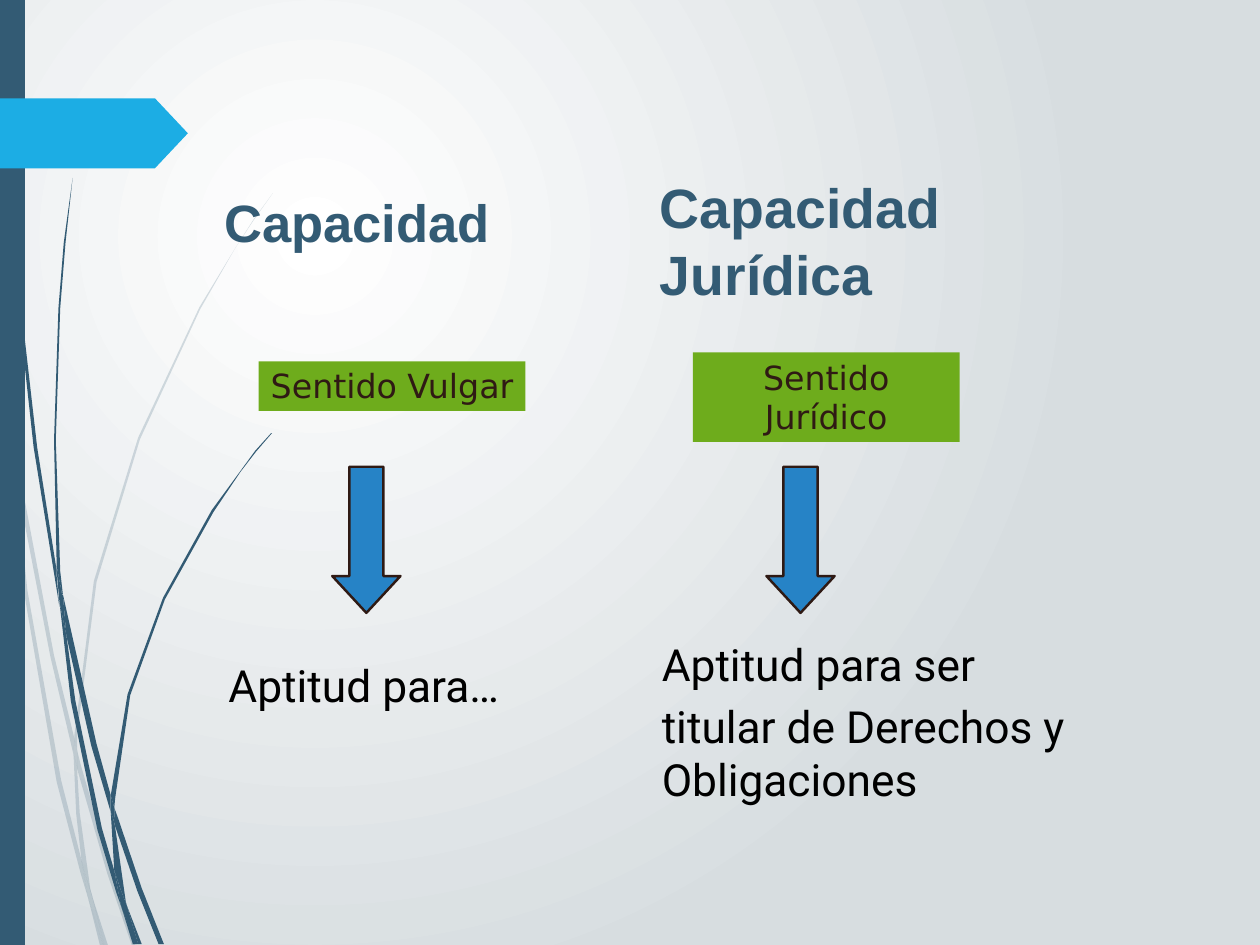
from dataclasses import dataclass

from lxml.etree import SubElement
from pptx import Presentation
from pptx.dml.color import RGBColor
from pptx.enum.shapes import MSO_SHAPE
from pptx.enum.text import MSO_ANCHOR, MSO_AUTO_SIZE, PP_ALIGN
from pptx.oxml.ns import qn
from pptx.util import Pt

SCALE = 9144


@dataclass(frozen=True)
class Theme:
    """Colours, fonts and type sizes of the slide."""
    navy: str = "335B74"
    sky: str = "1CADE4"
    green: str = "6EAC1C"
    blue: str = "2683C6"
    brown: str = "2F1A14"
    black: str = "000000"
    glow: str = "FFFFFF"
    mist: str = "D7DDE0"
    head: str = "Arial"
    label: str = "DejaVu Sans"
    body: str = "Roboto"
    title: float = 42.7
    large: float = 45
    note: float = 36
    small: float = 27


THEME = Theme()

PALE = [
    [(11, 498), (8, 458), (0, 401), (0, 426), (10, 489)],
    [(57, 742), (83, 852), (84, 834), (61, 740), (14, 491), (17, 535)],
    [(91, 863), (87, 847), (87, 868), (121, 986), (149, 1068), (153, 1068),
     (126, 983)],
    [(118, 1068), (122, 1068), (104, 1012)],
    [(92, 971), (69, 881), (31, 667), (17, 534), (11, 498), (27, 668), (64, 883),
     (91, 986), (100, 1016), (98, 1006)],
    [(83, 852), (86, 919), (92, 971), (95, 984), (104, 1012), (102, 1004),
     (90, 918), (87, 868), (87, 865)],
    [(87, 830), (109, 657), (158, 496), (226, 349), (265, 281), (286, 249),
     (308, 218), (286, 248), (265, 281), (225, 347), (156, 494), (106, 656),
     (84, 830), (84, 834), (87, 847)],
    [(100, 1016), (113, 1068), (117, 1068)],
    [(87, 865), (87, 868), (87, 847), (84, 834), (83, 852)],
    [(95, 984), (92, 971), (98, 1006), (100, 1016), (117, 1068), (118, 1068),
     (104, 1011)],
]
DARK = [
    [(8, 156), (19, 331), (38, 505), (66, 678), (67, 685), (64, 650), (64, 644),
     (42, 505), (22, 330), (9, 156), (5, 68), (4, 0), (3, 0), (4, 68)],
    [(103, 842), (125, 917), (125, 901), (125, 898), (109, 840), (71, 671),
     (75, 718)],
    [(133, 923), (129, 912), (130, 933), (155, 1006), (179, 1066), (185, 1066),
     (160, 1003)],
    [(129, 983), (115, 935), (85, 791), (75, 718), (67, 679), (80, 792),
     (110, 937), (131, 1007), (138, 1027), (136, 1020)],
    [(71, 671), (68, 645), (63, 497), (68, 348), (74, 274), (82, 201), (72, 274),
     (66, 348), (61, 497), (64, 639), (70, 671)],
    [(156, 1066), (160, 1066), (143, 1022)],
    [(67, 679), (75, 718), (71, 672), (70, 671), (64, 639), (64, 645)],
    [(130, 901), (147, 785), (186, 677), (241, 578), (272, 532), (289, 510),
     (307, 489), (306, 489), (288, 509), (272, 531), (239, 576), (184, 675),
     (144, 784), (125, 898), (129, 912)],
    [(138, 1027), (150, 1066), (154, 1066)],
    [(125, 917), (129, 983), (136, 1004), (143, 1022), (142, 1018), (130, 934),
     (128, 925)],
    [(125, 917), (128, 925), (130, 933), (129, 912), (125, 898), (125, 901)],
    [(136, 1004), (129, 983), (136, 1020), (138, 1027), (153, 1066), (156, 1066),
     (143, 1022)],
]


def px(n):
    """Turn px into EMU."""
    return n * SCALE


def rgb(code):
    """Give the colour for a hex code."""
    return RGBColor.from_string(code)


def paint(shape, fill, line=None):
    """Set fill and outline, and drop the shadow."""
    shape.shadow.inherit = False
    shape.fill.solid()
    shape.fill.fore_color.rgb = rgb(fill)
    if line:
        shape.line.color.rgb = rgb(line)
        shape.line.width = Pt(2)
    else:
        shape.line.fill.background()


def blade(slide, knots, alpha=None):
    """Draw one piece of a blade of grass."""
    pen = slide.shapes.build_freeform(*knots[0], scale=SCALE)
    pen.add_line_segments(knots[1:], close=True)
    shape = pen.convert_to_shape()
    paint(shape, THEME.navy)
    if alpha:
        tint = shape.element.spPr.find(".//" + qn("a:srgbClr"))
        SubElement(tint, qn("a:alpha"), val=str(alpha * 1000))


def block(slide, kind, box, fill, line=None):
    """Add a preset shape."""
    shape = slide.shapes.add_shape(kind, *map(px, box))
    paint(shape, fill, line)
    return shape


def write(shape, lines, font, size, color, bold=False, align=PP_ALIGN.LEFT, gap=0):
    """Fill a shape with paragraphs of one style."""
    frame = shape.text_frame
    frame.word_wrap = True
    frame.auto_size = MSO_AUTO_SIZE.NONE
    frame.vertical_anchor = MSO_ANCHOR.TOP
    frame.margin_left = frame.margin_right = px(10)
    frame.margin_top = frame.margin_bottom = px(5)
    for i, words in enumerate(lines):
        para = frame.add_paragraph() if i else frame.paragraphs[0]
        para.alignment = align
        para.space_before = Pt(gap if i else 0)
        run = para.add_run()
        run.text = words
        run.font.name, run.font.size = font, Pt(size)
        run.font.bold = bold
        run.font.color.rgb = rgb(color)


def text(slide, box, *args, **style):
    """Add a text box."""
    write(slide.shapes.add_textbox(*map(px, box)), *args, **style)


def ground(slide):
    """Lay the round gradient behind the slide."""
    fill = slide.background.fill
    fill.gradient()
    for stop, code, place in zip(fill.gradient_stops, (THEME.glow, THEME.mist), (0, 1)):
        stop.color.rgb, stop.position = rgb(code), place
    grad = slide.element.find(".//" + qn("a:gradFill"))
    grad.remove(grad.find(qn("a:lin")))
    ring = SubElement(grad, qn("a:path"), path="circle")
    SubElement(ring, qn("a:fillToRect"), l="50000", t="50000", r="100000", b="100000")


def decor(slide):
    """Draw the grass, the side bar and the tag."""
    for knots in PALE:
        blade(slide, knots, alpha=20)
    for knots in DARK:
        blade(slide, knots)
    block(slide, MSO_SHAPE.RECTANGLE, (0, 0, 28, 1067), THEME.navy)
    tag = block(slide, MSO_SHAPE.PENTAGON, (0, 111, 212, 79), THEME.sky)
    tag.adjustments[0] = 0.47


def title(slide, box, words):
    """Place the title above the decoration."""
    shape = slide.shapes.title
    shape.left, shape.top, shape.width, shape.height = map(px, box)
    write(shape, [words], THEME.head, THEME.title, THEME.navy, bold=True)
    shape.element.getparent().append(shape.element)


def sense(slide, left, top, high, words):
    """Add a green label with its arrow below."""
    label = block(slide, MSO_SHAPE.RECTANGLE, (left, top, 301, high), THEME.green)
    write(label, [words], THEME.label, THEME.small, THEME.brown,
          align=PP_ALIGN.CENTER)
    arrow = block(slide, MSO_SHAPE.DOWN_ARROW, (left + 83, 527, 77, 165),
                  THEME.blue, THEME.brown)
    arrow.adjustments[0], arrow.adjustments[1] = 0.5, 0.54


def main():
    """Build and save the slide."""
    deck = Presentation()
    deck.slide_width, deck.slide_height = px(1422), px(1067)
    slide = deck.slides.add_slide(deck.slide_layouts[5])
    ground(slide)
    decor(slide)
    title(slide, (243, 210, 391, 133), "Capacidad")
    sense(slide, 292, 408, 56, "Sentido Vulgar")
    text(slide, (735, 191, 366, 162), ["Capacidad Jurídica"],
         THEME.head, THEME.large, THEME.navy, bold=True)
    note = THEME.body, THEME.note, THEME.black
    text(slide, (248, 738, 341, 71), ["Aptitud para…"], *note)
    text(slide, (737, 715, 525, 265),
         ["Aptitud para ser", "titular de Derechos y Obligaciones"], *note, gap=7)
    sense(slide, 782, 398, 101, "Sentido Jurídico")
    deck.save("out.pptx")


if __name__ == "__main__":
    main()
